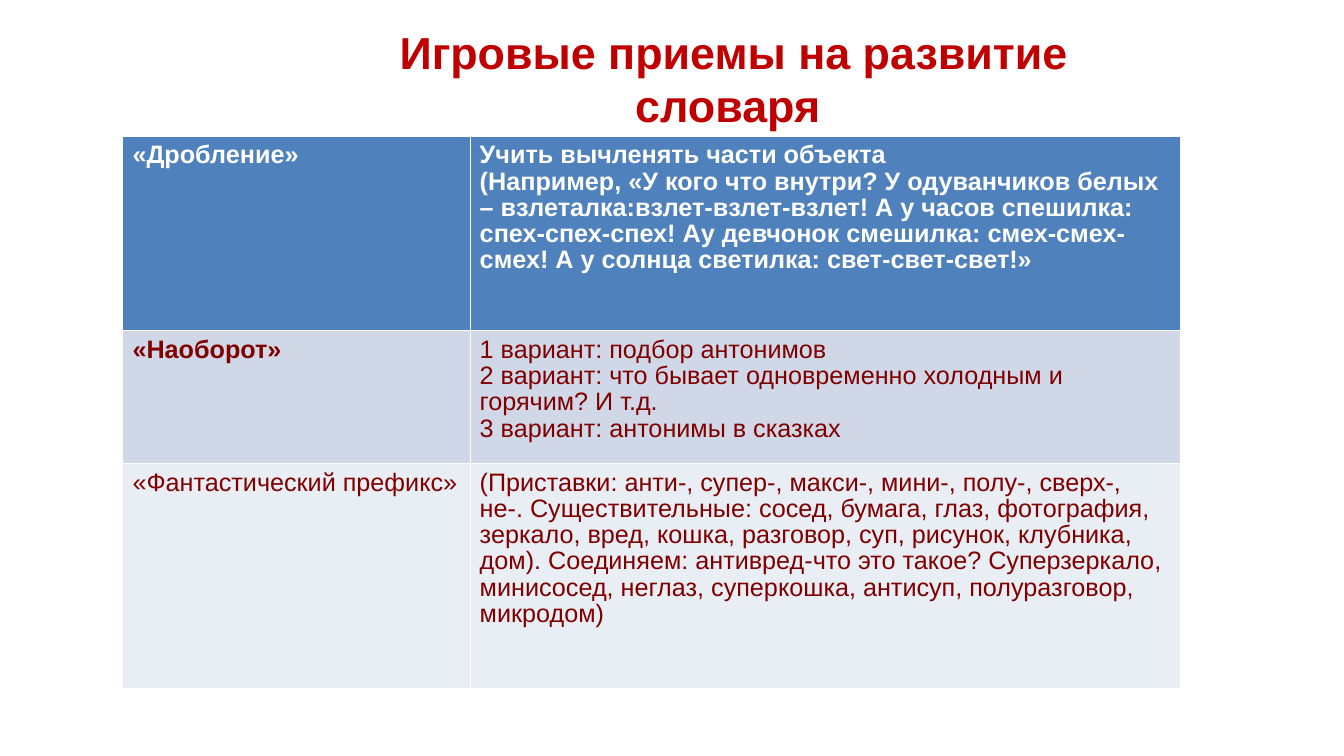
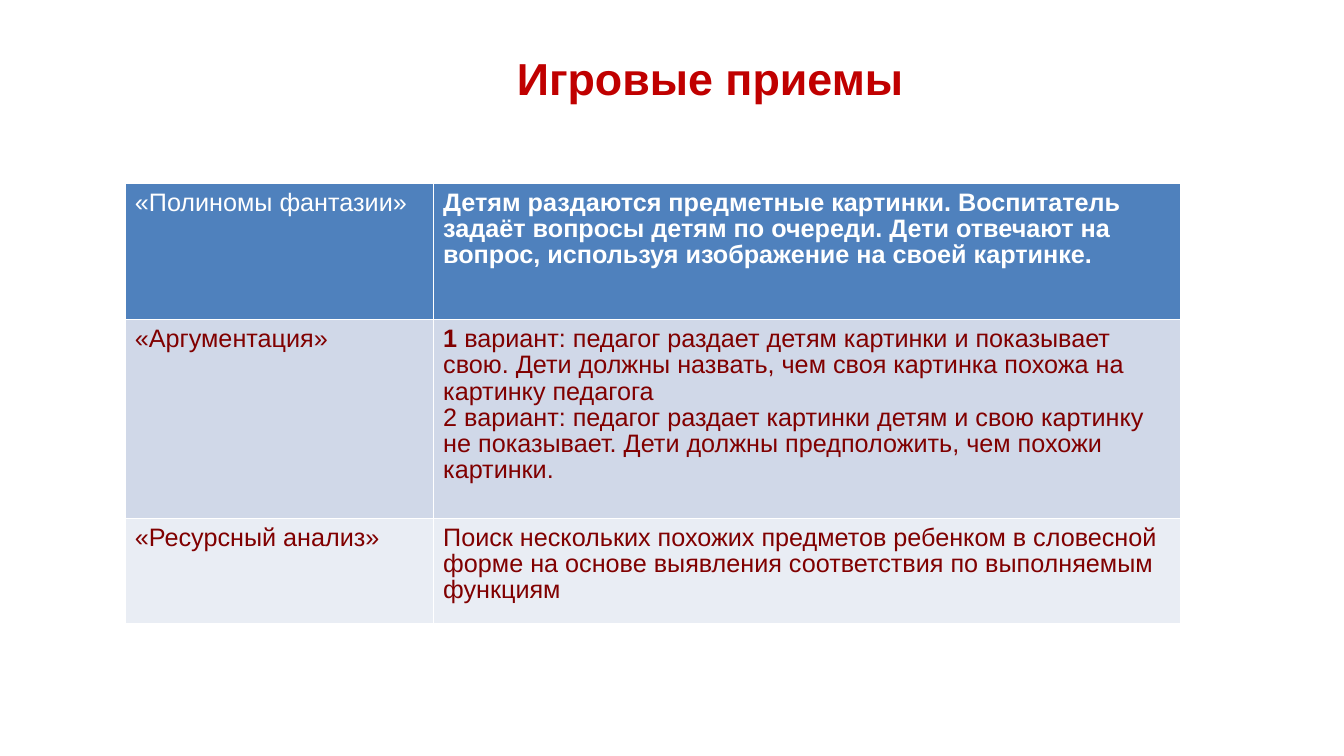
from typing import NamedTuple

from lxml.etree import SubElement
from pptx import Presentation
from pptx.dml.color import RGBColor
from pptx.enum.text import MSO_ANCHOR, MSO_AUTO_SIZE, PP_ALIGN
from pptx.oxml.ns import qn
from pptx.util import Cm, Pt

WHITE = RGBColor(0xFF, 0xFF, 0xFF)
TITLE_RED = RGBColor(0xC0, 0x00, 0x00)
MAROON = RGBColor(0x80, 0x00, 0x00)
ROW_FILLS = (
    RGBColor(0x4F, 0x81, 0xBD),
    RGBColor(0xD0, 0xD8, 0xE8),
    RGBColor(0xE9, 0xED, 0xF4),
)
FONT = "Arial"
THIN, THICK = Pt(0.23), Pt(0.75)


class Run(NamedTuple):
    """A piece of text with one weight."""

    text: str
    bold: bool = False


class Deck:
    """Holds the shared style and the slide being built."""

    def __init__(self):
        self.presentation = Presentation()
        self.presentation.slide_width = Cm(33.87)
        self.presentation.slide_height = Cm(19.05)
        self.slide = None

    def add_slide(self):
        """Start a slide on the title-only layout."""
        layout = self.presentation.slide_layouts[5]
        self.slide = self.presentation.slides.add_slide(layout)

    def add_run(self, paragraph, run, size, color):
        """Append one formatted run to a paragraph."""
        text_run = paragraph.add_run()
        text_run.text = run.text
        font = text_run.font
        font.name, font.size, font.bold = FONT, Pt(size), run.bold
        font.color.rgb = color

    def add_title(self, text, left, width):
        """Place the slide title and fill it in."""
        title = self.slide.shapes.title
        title.left, title.top = Cm(left), Cm(0.76)
        title.width, title.height = Cm(width), Cm(2.41)
        frame = title.text_frame
        frame.word_wrap = True
        frame.auto_size = MSO_AUTO_SIZE.NONE
        frame.vertical_anchor = MSO_ANCHOR.MIDDLE
        paragraph = frame.paragraphs[0]
        paragraph.alignment = PP_ALIGN.CENTER
        self.add_run(paragraph, Run(text, True), 32, TITLE_RED)

    def add_table(self, left, top, widths, heights, rows):
        """Add a table whose first row is a dark header."""
        table = self.slide.shapes.add_table(
            len(rows), len(widths), Cm(left), Cm(top),
            Cm(sum(widths)), Cm(sum(heights)),
        ).table
        table.first_row = table.horz_banding = False
        for column, width in zip(table.columns, widths):
            column.width = Cm(width)
        for row, height in zip(table.rows, heights):
            row.height = Cm(height)
        for row_index, row in enumerate(rows):
            for column_index, paragraphs in enumerate(row):
                cell = table.cell(row_index, column_index)
                self.fill_cell(cell, paragraphs, row_index)

    def fill_cell(self, cell, paragraphs, row_index):
        """Write the paragraphs of a cell and style it by its row."""
        cell.margin_left = cell.margin_right = Cm(0.25)
        cell.margin_top, cell.margin_bottom = Cm(0.18), Cm(0.13)
        cell.vertical_anchor = MSO_ANCHOR.TOP
        cell.fill.solid()
        cell.fill.fore_color.rgb = ROW_FILLS[row_index]
        color = WHITE if row_index == 0 else MAROON
        frame = cell.text_frame
        for index, runs in enumerate(paragraphs):
            paragraph = frame.add_paragraph() if index else frame.paragraphs[0]
            paragraph.line_spacing = 0.93
            for run in runs:
                self.add_run(paragraph, run, 18, color)
        self.add_borders(
            cell,
            top=THICK if row_index == 1 else THIN,
            bottom=THICK if row_index == 0 else THIN,
        )

    def add_borders(self, cell, top, bottom):
        """Draw white borders ahead of the cell fill."""
        properties = cell._tc.get_or_add_tcPr()
        edges = (("a:lnL", THIN), ("a:lnR", THIN), ("a:lnT", top), ("a:lnB", bottom))
        for position, (tag, width) in enumerate(edges):
            line = SubElement(properties, qn(tag), w=str(int(width)))
            fill = SubElement(line, qn("a:solidFill"))
            SubElement(fill, qn("a:srgbClr"), val=str(WHITE))
            properties.insert(position, line)


def plain(*texts):
    """Return one regular paragraph for each text."""
    return [[Run(text)] for text in texts]


def bold(*texts):
    """Return one bold paragraph for each text."""
    return [[Run(text, True)] for text in texts]


VOCABULARY_GAMES = [
    (
        bold("«Дробление»"),
        bold(
            "Учить вычленять части объекта",
            "(Например, «У кого что внутри? У одуванчиков белых – "
            "взлеталка:взлет-взлет-взлет! А у часов спешилка: спех-спех-спех! "
            "Ау девчонок смешилка: смех-смех-смех! "
            "А у солнца светилка: свет-свет-свет!»",
        ),
    ),
    (
        bold("«Наоборот»"),
        plain(
            "1 вариант: подбор антонимов",
            "2 вариант: что бывает одновременно холодным и горячим? И т.д.",
            "3 вариант: антонимы в сказках",
        ),
    ),
    (
        plain("«Фантастический префикс»"),
        plain(
            "(Приставки: анти-, супер-, макси-, мини-, полу-, сверх-, не-. "
            "Существительные: сосед, бумага, глаз, фотография, зеркало, вред, "
            "кошка, разговор, суп, рисунок, клубника, дом). Соединяем: "
            "антивред-что это такое? Суперзеркало, минисосед, неглаз, "
            "суперкошка, антисуп, полуразговор, микродом)",
        ),
    ),
]

PICTURE_GAMES = [
    (
        plain("«Полиномы фантазии»"),
        bold(
            "Детям раздаются предметные картинки. Воспитатель задаёт вопросы "
            "детям по очереди. Дети отвечают на вопрос, используя изображение "
            "на своей картинке.",
        ),
    ),
    (
        plain("«Аргументация»"),
        [
            [
                Run("1 ", True),
                Run(
                    "вариант: педагог раздает детям картинки и показывает свою. "
                    "Дети должны назвать, чем своя картинка похожа на картинку "
                    "педагога"
                ),
            ],
            [
                Run(
                    "2 вариант: педагог раздает картинки детям и свою картинку "
                    "не показывает. Дети должны предположить, чем похожи картинки."
                ),
            ],
        ],
    ),
    (
        plain("«Ресурсный анализ»"),
        plain(
            "Поиск нескольких похожих предметов ребенком в словесной форме на "
            "основе выявления соответствия по выполняемым функциям",
        ),
    ),
]


def main():
    """Build both slides and save them."""
    deck = Deck()

    deck.add_slide()
    deck.add_title("Игровые приемы на развитие словаря ", 8.41, 20.17)
    deck.add_table(3.09, 3.42, (8.75, 17.89), (4.9, 3.35, 5.67), VOCABULARY_GAMES)

    deck.add_slide()
    deck.add_title("Игровые приемы", 7.42, 20.96)
    deck.add_table(3.15, 4.62, (7.77, 18.82), (3.43, 5, 2.64), PICTURE_GAMES)

    deck.presentation.save("out.pptx")


if __name__ == "__main__":
    main()
